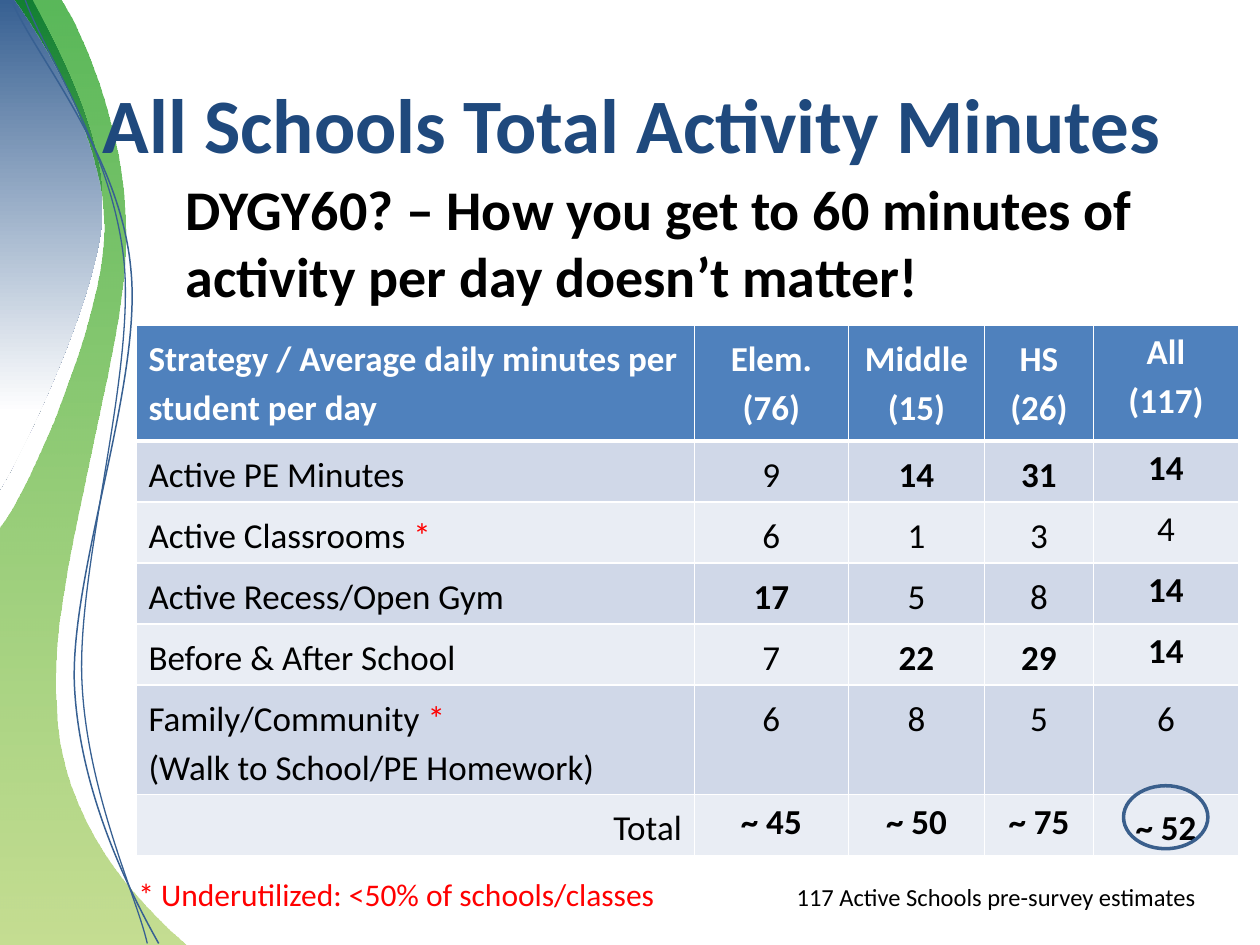
from lxml.etree import SubElement
from pptx import Presentation
from pptx.dml.color import RGBColor
from pptx.enum.shapes import MSO_SHAPE
from pptx.enum.text import MSO_ANCHOR as ANCHOR, PP_ALIGN as ALIGN
from pptx.oxml.ns import qn
from pptx.util import Cm, Pt

COLORS = {
    "navy": "1F497D", "wave_blue": "376092", "ring": "3A5F8C",
    "green": "009200", "lime": "95C238", "header": "4F81BD",
    "band_dark": "D0D8E8", "band_light": "E9EDF4",
    "white": "FFFFFF", "black": "000000", "red": "FF0000",
}

# Each outline is a start point, then segments of one point (line) or three (curve), in cm.
BLUE_SWOOSH = [
    (-0.03, 9.91),
    [(0.36, 9.35), (1.96, 6.05), (2.06, 4.39)],
    [(2.18, 2.74), (1.02, 0.74), (0.66, 0)],
    [(0, 0)],
]
GREEN_SWOOSH = [
    (-0.03, 19.05),
    [(-0.03, 10.67)],
    [(0.56, 9.98), (2.11, 6.4), (2.11, 4.6)],
    [(2.11, 2.79), (0.86, 0.79), (0.3, 0)],
    [(1.22, -0.03)],
    [(1.47, 0.3), (2.57, 2.46), (2.54, 4.83)],
    [(2.54, 7.19), (0.94, 11.79), (1.14, 14.15)],
    [(1.19, 16.59), (2.79, 18.19), (3.81, 19.08)],
]
OUTER_STRAND = [
    (3.2, 19.02),
    [(2.69, 18.11), (1.6, 16.05), (1.5, 13.79)],
    [(1.42, 11.53), (2.87, 7.72), (2.64, 5.44)],
    [(2.44, 3.15), (0.74, 1.17), (0.25, 0.05)],
]
INNER_STRAND = [
    (2.97, 19.02),
    [(2.77, 18.11), (1.73, 15.93), (1.65, 13.67)],
    [(1.57, 11.38), (2.69, 7.65), (2.51, 5.36)],
    [(2.31, 3.1), (0.91, 1.12), (0.51, 0)],
]

COLUMN_WIDTHS = [11.26, 3.1, 2.75, 2.19, 2.93]
ROW_HEIGHTS = [2.34, 1.23, 1.23, 1.23, 1.23, 2.2, 1.23]
MINUTES = [
    ["Strategy / Average daily minutes per student per day",
     "Elem. (76)", "Middle (15)", "HS\n(26)", "All\n(117)"],
    ["Active PE Minutes", "9", "14", "31", "14"],
    ["Active Classrooms *", "6", "1", "3", "4"],
    ["Active Recess/Open Gym", "17", "5", "8", "14"],
    ["Before & After School", "7", "22", "29", "14"],
    ["Family/Community *\n(Walk to School/PE Homework)", "6", "8", "5", "6"],
    ["Total", "~ 45", "~ 50", "~ 75", "~ 52"],
]


def rgb(name):
    return RGBColor.from_string(COLORS[name])


def add_run(paragraph, text, color, size, bold=False):
    run = paragraph.add_run()
    run.text = text
    for attribute, value in {"name": "Calibri", "size": Pt(size), "bold": bold}.items():
        setattr(run.font, attribute, value)
    run.font.color.rgb = rgb(color)


def add_outline(slide, box, outline, close):
    """Draw the outline, turning each three-point segment into one Bezier curve."""
    left, top = box[:2]
    start, *segments = outline
    points = [(Cm(left + x), Cm(top + y)) for x, y in [start, *sum(segments, [])]]
    builder = slide.shapes.build_freeform(*points[0])
    builder.add_line_segments(points[1:], close=close)
    shape = builder.convert_to_shape()
    shape.shadow.inherit = False

    lines = iter(list(shape._element.iter(qn("a:lnTo"))))
    for segment in segments:
        curve, *others = [next(lines) for _ in segment]
        if others:
            curve.tag = qn("a:cubicBezTo")
            for other in others:
                curve.append(other[0])
                other.getparent().remove(other)
    return shape


def add_waves(slide, box):
    swooshes = [
        (BLUE_SWOOSH, [("wave_blue", 0, 100), ("white", 0.84, 100)]),
        (GREEN_SWOOSH, [("green", 0, 65), ("lime", 1, 55)]),
    ]
    for outline, stops in swooshes:
        swoosh = add_outline(slide, box, outline, close=True)
        swoosh.line.fill.background()
        swoosh.fill.gradient()
        swoosh.fill.gradient_angle = 270
        for stop, (color, position, opacity) in zip(swoosh.fill.gradient_stops, stops):
            stop.color.rgb = rgb(color)
            stop.position = position
            if opacity < 100:
                SubElement(stop._gs[0], qn("a:alpha"), val=str(opacity * 1000))
    for outline, width in [(OUTER_STRAND, 0.85), (INNER_STRAND, 0.75)]:
        strand = add_outline(slide, box, outline, close=False)
        strand.fill.background()
        strand.line.color.rgb = rgb("wave_blue")
        strand.line.width = Pt(width)


def add_text_frame(slide, box):
    frame = slide.shapes.add_textbox(*map(Cm, box)).text_frame
    frame.word_wrap = True
    return frame


def add_title(slide, box):
    frame = add_text_frame(slide, box)
    frame.vertical_anchor = ANCHOR.MIDDLE
    frame.paragraphs[0].alignment = ALIGN.CENTER
    add_run(frame.paragraphs[0], "All Schools Total Activity Minutes", "navy", 44, True)


def add_message(slide, box):
    message = add_text_frame(slide, box).paragraphs[0]
    message._p.get_or_add_pPr().set("marL", str(Cm(0.32)))
    add_run(message, "DYGY60? – How you get to 60 minutes of activity per day doesn’t matter!",
            "black", 32, True)


def add_footnote(slide, box):
    footnote = add_text_frame(slide, box).paragraphs[0]
    tabs = SubElement(footnote._p.get_or_add_pPr(), qn("a:tabLst"))
    SubElement(tabs, qn("a:tab"), pos=str(Cm(13.27)), algn="l")
    add_run(footnote, "* Underutilized: <50% of schools/classes\t", "red", 18)
    add_run(footnote, "117 Active Schools pre-survey estimates", "black", 14)


def add_borders(cell, widths):
    properties = cell._tc.get_or_add_tcPr()
    for side, width in widths.items():
        border = SubElement(properties, qn(f"a:ln{side}"), w=str(Pt(width)))
        fill = SubElement(border, qn("a:solidFill"))
        SubElement(fill, qn("a:srgbClr"), val=COLORS["white"])


def fill_cell(cell, text, row, column):
    header, total = row == 0, row == len(MINUTES) - 1
    last_column = column == len(COLUMN_WIDTHS) - 1
    add_borders(cell, {"L": 1, "R": 1, "T": 3 if row == 1 else 1, "B": 3 if header else 1})
    cell.fill.solid()
    cell.fill.fore_color.rgb = rgb(
        "header" if header else "band_dark" if row % 2 else "band_light")
    if last_column:
        for side in ("left", "right", "top", "bottom"):
            setattr(cell, f"margin_{side}", 0)

    spacing = 1.15
    if last_column and row >= len(MINUTES) - 2:
        spacing = 1.3
    elif total and column:
        spacing = 1.0
    # Averages of ten minutes or more stand out, as do the totals.
    bold = header or text.startswith("~") or (text.isdigit() and int(text) >= 10)
    for index, line in enumerate(text.split("\n")):
        paragraph = cell.text_frame.paragraphs[0] if index == 0 else cell.text_frame.add_paragraph()
        paragraph.line_spacing = spacing
        paragraph.alignment = ALIGN.CENTER if column else ALIGN.RIGHT if total else ALIGN.LEFT
        label, star, _ = line.partition("*")
        add_run(paragraph, label, "white" if header else "black", 20, bold)
        if star:
            add_run(paragraph, star, "red", 20)


def add_minutes_table(slide, box):
    table = slide.shapes.add_table(len(MINUTES), len(COLUMN_WIDTHS), *map(Cm, box)).table
    for column, width in zip(table.columns, COLUMN_WIDTHS):
        column.width = Cm(width)
    for row, height in zip(table.rows, ROW_HEIGHTS):
        row.height = Cm(height)
    for row, texts in enumerate(MINUTES):
        for column, text in enumerate(texts):
            fill_cell(table.cell(row, column), text, row, column)


def add_total_ring(slide, box):
    ring = slide.shapes.add_shape(MSO_SHAPE.OVAL, *map(Cm, box))
    ring.shadow.inherit = False
    ring.fill.background()
    ring.line.color.rgb = rgb("ring")
    ring.line.width = Pt(2)


def main():
    deck = Presentation()
    deck.slide_width, deck.slide_height = Cm(25.4), Cm(19.05)
    slide = deck.slides.add_slide(deck.slide_layouts[6])
    add_waves(slide, (0, 0, 3.81, 19.05))
    add_title(slide, (1.28, 1.02, 22.94, 2.9))
    add_message(slide, (3.18, 3.39, 22.22, 3.6))
    add_footnote(slide, (2.54, 17.51, 23.7, 1.02))
    add_minutes_table(slide, (2.74, 6.55, sum(COLUMN_WIDTHS), sum(ROW_HEIGHTS)))
    add_total_ring(slide, (22.65, 15.84, 1.7, 1.27))
    deck.save("out.pptx")


if __name__ == "__main__":
    main()
